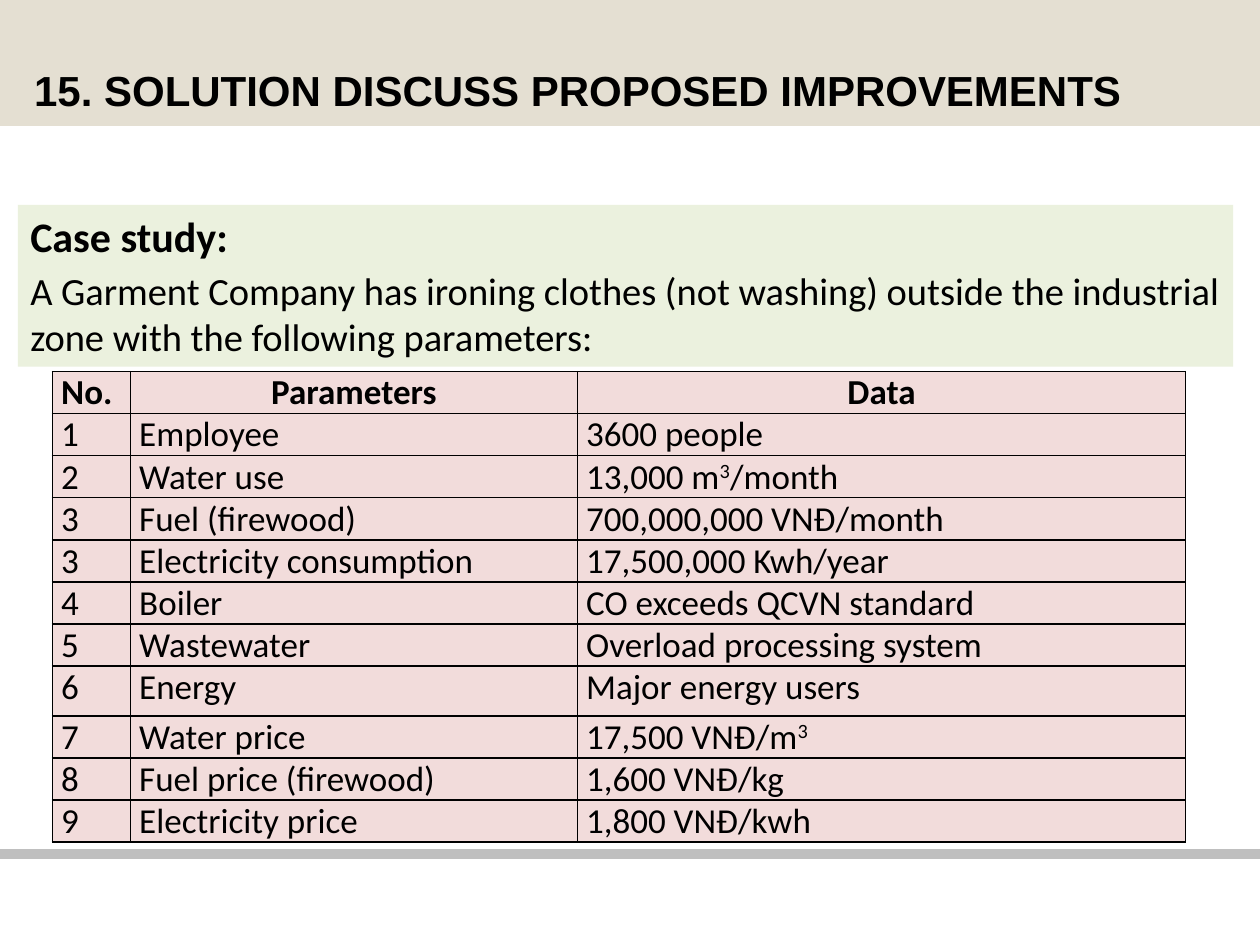
import pptx
import pptx.dml.color
import pptx.enum.shapes
import pptx.enum.text
import pptx.oxml
import pptx.oxml.ns
import pptx.util

Pt = pptx.util.Pt
ALIGN = pptx.enum.text.PP_ALIGN
ANCHOR = pptx.enum.text.MSO_ANCHOR
FIT = pptx.enum.text.MSO_AUTO_SIZE


def color(value):
    return pptx.dml.color.RGBColor.from_string(value)


def write(para, text, font="Calibri", size=20, bold=False, ink="000000",
          align=ALIGN.LEFT, space=0):
    """Fill a paragraph; every second part between ^ marks is superscript."""
    para.alignment = align
    para.space_before = para.space_after = Pt(space)
    for index, part in enumerate(text.split("^")):
        if not part:
            continue
        span = para.add_run()
        span.text = part
        span.font.name, span.font.size, span.font.bold = font, Pt(size), bold
        span.font.color.rgb = color(ink)
        if index % 2:
            span.font._element.set("baseline", "30000")


class Page:
    band, bar, panel, cell, border = "E4DFD2", "BFBFBF", "EBF1DE", "F2DCDB", "000000"

    def __init__(self, deck):
        self.page = deck.slides.add_slide(deck.slide_layouts[5])
        self.shapes = self.page.shapes

    def rectangle(self, left, top, width, height, fill, line=None):
        box = self.shapes.add_shape(pptx.enum.shapes.MSO_SHAPE.RECTANGLE,
                                    Pt(left), Pt(top), Pt(width), Pt(height))
        box.shadow.inherit = False
        box.fill.solid()
        box.fill.fore_color.rgb = color(fill)
        if line:
            box.line.color.rgb = color(fill)
            box.line.width = Pt(line)
        else:
            box.line.fill.background()
        return box

    def outline(self, points, fill):
        start, *rest = [(Pt(x), Pt(y)) for x, y in points]
        builder = self.shapes.build_freeform(*start, scale=1.0)
        builder.add_line_segments(rest, close=True)
        shape = builder.convert_to_shape()
        shape.shadow.inherit = False
        shape.fill.solid()
        shape.fill.fore_color.rgb = color(fill)
        shape.line.fill.background()

    def title(self, text, left, top, width, height):
        box = self.shapes.title
        box.left, box.top, box.width, box.height = Pt(left), Pt(top), Pt(width), Pt(height)
        frame = box.text_frame
        frame.word_wrap = True
        frame.auto_size = FIT.SHAPE_TO_FIT_TEXT
        frame.vertical_anchor = ANCHOR.TOP
        write(frame.paragraphs[0], text, font="Arial", size=24, bold=True)
        # Bring the title in front of the band
        box.element.getparent().append(box.element)

    def case_panel(self, heading, body, left, top, width, height):
        frame = self.rectangle(left, top, width, height, self.panel).text_frame
        frame.word_wrap = True
        frame.auto_size = FIT.SHAPE_TO_FIT_TEXT
        frame.vertical_anchor = ANCHOR.TOP
        write(frame.paragraphs[0], heading, size=24, bold=True)
        write(frame.add_paragraph(), body, size=22, space=3)

    def cell_borders(self, cell):
        properties = cell._tc.get_or_add_tcPr()
        for side in ("lnL", "lnR", "lnT", "lnB"):
            properties.append(pptx.oxml.parse_xml(
                f'<a:{side} {pptx.oxml.ns.nsdecls("a")} w="{Pt(1)}"><a:solidFill>'
                f'<a:srgbClr val="{self.border}"/></a:solidFill></a:{side}>'))

    def table(self, rows, left, top, widths, heights):
        grid = self.shapes.add_table(len(rows), len(widths), Pt(left), Pt(top),
                                     Pt(sum(widths)), Pt(sum(heights))).table
        for column, width in zip(grid.columns, widths):
            column.width = Pt(width)
        for row, height in zip(grid.rows, heights):
            row.height = Pt(height)
        for r, texts in enumerate(rows):
            for c, text in enumerate(texts):
                cell = grid.cell(r, c)
                self.cell_borders(cell)
                cell.fill.solid()
                cell.fill.fore_color.rgb = color(self.cell)
                cell.margin_left = cell.margin_right = Pt(5)
                cell.margin_top = cell.margin_bottom = 0
                centred = r == 0 and c > 0
                write(cell.text_frame.paragraphs[0], text, bold=r == 0,
                      align=ALIGN.CENTER if centred else ALIGN.LEFT)


PARAMETERS = [
    ("No.", "Parameters", "Data"),
    ("1", "Employee", "3600 people"),
    ("2", "Water use", "13,000 m^3^/month"),
    ("3", "Fuel (firewood)", "700,000,000 VNĐ/month"),
    ("3", "Electricity consumption", "17,500,000 Kwh/year"),
    ("4", "Boiler", "CO exceeds QCVN standard"),
    ("5", "Wastewater", "Overload processing system"),
    ("6", "Energy", "Major energy users"),
    ("7", "Water price", "17,500 VNĐ/m^3^"),
    ("8", "Fuel price (firewood)", "1,600 VNĐ/kg"),
    ("9", "Electricity price", "1,800 VNĐ/kwh"),
]


def main():
    deck = pptx.Presentation()
    deck.slide_width, deck.slide_height = Pt(720), Pt(540)
    page = Page(deck)

    # Footer bar and header band
    page.rectangle(0, 486, 720, 3.6, page.bar, line=2)
    page.outline([(-2, 72), (720, 72), (720, -6), (-2, -6)], page.band)

    # Case study
    page.case_panel("Case study:",
                    "A Garment Company has ironing clothes (not washing) outside the "
                    "industrial zone with the following parameters:",
                    10.2, 117, 694.4, 92.5)
    page.title("15. SOLUTION DISCUSS PROPOSED IMPROVEMENTS", 12.3, 33.4, 695, 36)

    # Company parameters, with a taller row for energy
    heights = [28.6 if row[1] == "Energy" else 24 for row in PARAMETERS]
    page.table(PARAMETERS, 30, 212.3, [44.6, 255.4, 347.6], heights)

    deck.save("out.pptx")


if __name__ == "__main__":
    main()
